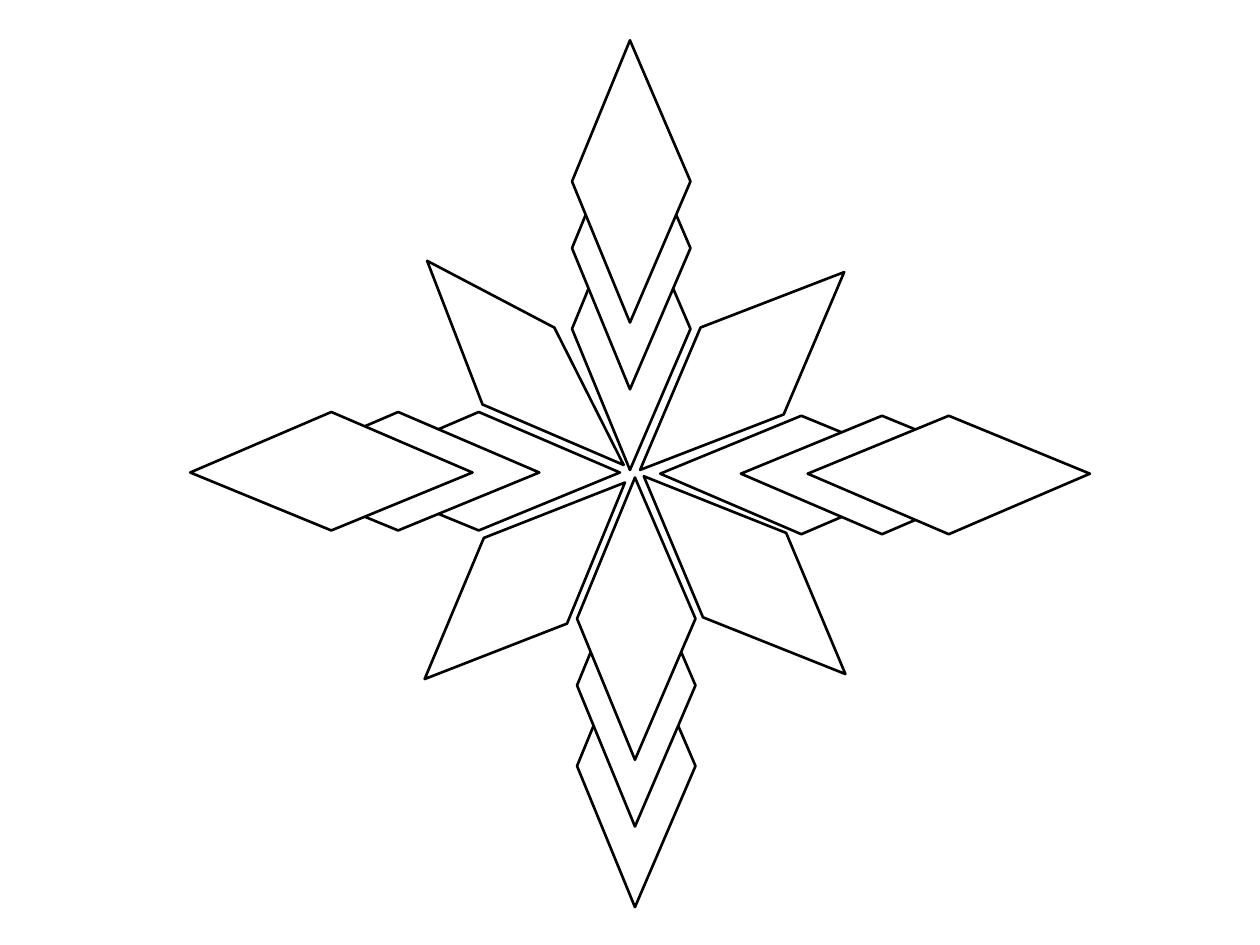
from pptx import Presentation, util as u
from pptx.dml.color import RGBColor

COLORS = {"fill": "FFFFFF", "line": "000000"}
LEFT, RIGHT, HALF_HEIGHT = 0.46, 0.48, 1.12
STEPS = (0, 0.64, 1.17)
LEAVES = {
    "upper left": [(3.83, 3.21), (4.95, 3.69), (4.4, 2.6), (3.39, 2.07)],
    "lower right": [(6.24, 4.23), (5.11, 3.78), (5.58, 4.9), (6.71, 5.35)],
    "lower left": [(4.5, 4.95), (4.96, 3.83), (3.84, 4.27), (3.37, 5.39)],
    "upper right": [(5.56, 2.6), (5.08, 3.73), (6.22, 3.29), (6.7, 2.16)],
}
ARMS = {
    "top": (5, 2.61, 0, -1, 0),
    "bottom": (5.04, 6.08, 0, -1, 0),
    "left": (3.79, 3.74, -1, 0, 270),
    "right": (6.35, 3.77, 1, 0, 90),
}


class Star:
    """Draws outlined petals in one group on the current slide."""

    def __init__(self, s, line_width=1.5):
        self.group = s.shapes.add_group_shape()
        self.line_width = u.Pt(line_width)

    def petal(self, points, rotation=0):
        start, *rest = [(u.Inches(x), u.Inches(y)) for x, y in points]
        fb = self.group.shapes.build_freeform(*start)
        fb.add_line_segments(rest, close=True)
        sp = fb.convert_to_shape()
        if rotation:
            sp.rotation = rotation
        sp.shadow.inherit = False
        sp.fill.solid()
        sp.fill.fore_color.rgb = RGBColor.from_string(COLORS["fill"])
        sp.line.color.rgb = RGBColor.from_string(COLORS["line"])
        sp.line.width = self.line_width

    def arm(self, x, y, dx, dy, rotation):
        for step in STEPS:
            cx, cy = x + dx * step, y + dy * step
            points = [(cx, cy - HALF_HEIGHT), (cx + RIGHT, cy),
                      (cx, cy + HALF_HEIGHT), (cx - LEFT, cy)]
            self.petal(points, rotation)


def main():
    prs = Presentation()
    prs.slide_width, prs.slide_height = u.Inches(10), u.Inches(7.5)
    star = Star(prs.slides.add_slide(prs.slide_layouts[6]))
    for points in LEAVES.values():
        star.petal(points)
    for placing in ARMS.values():
        star.arm(*placing)
    prs.save("out.pptx")


if __name__ == "__main__":
    main()
